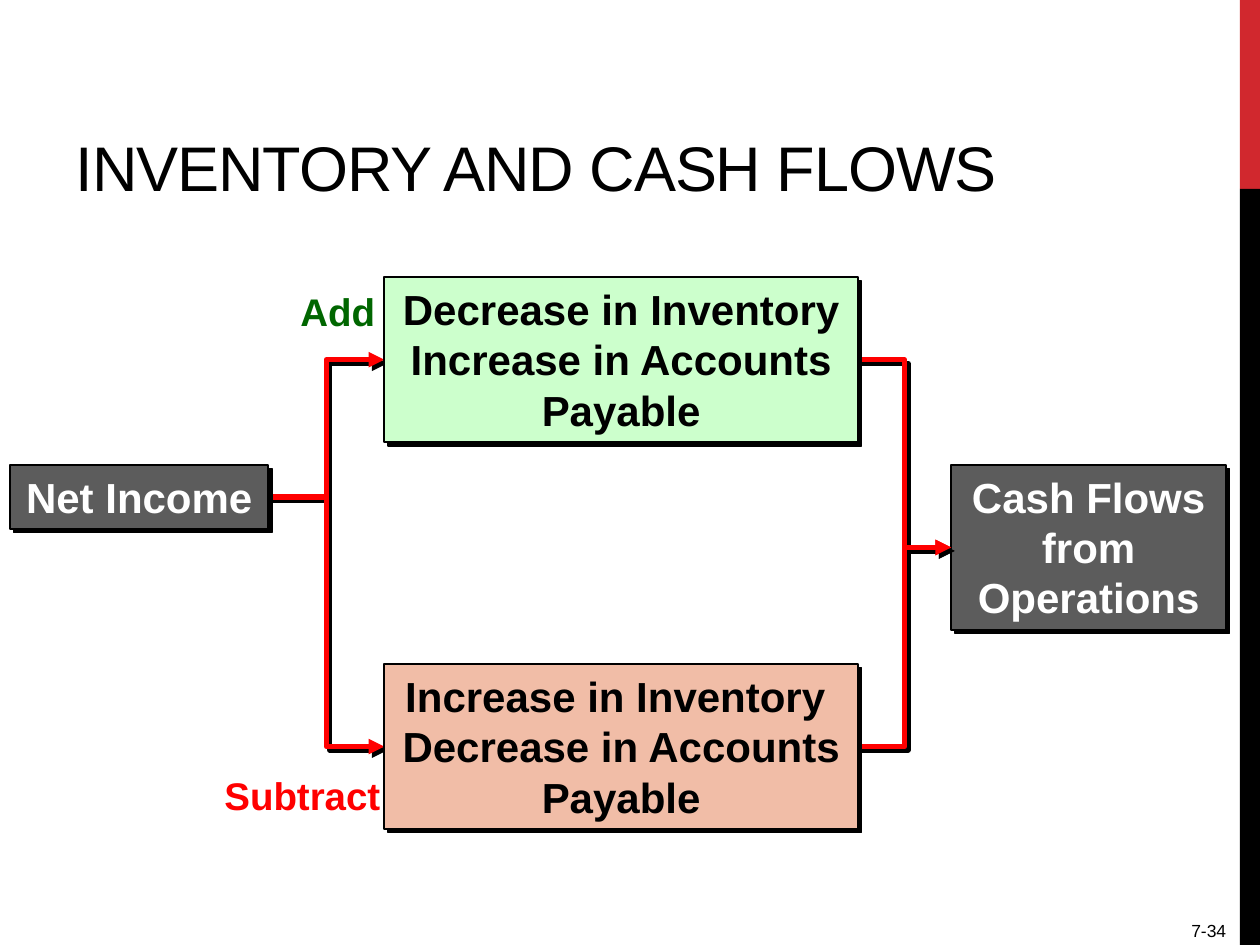
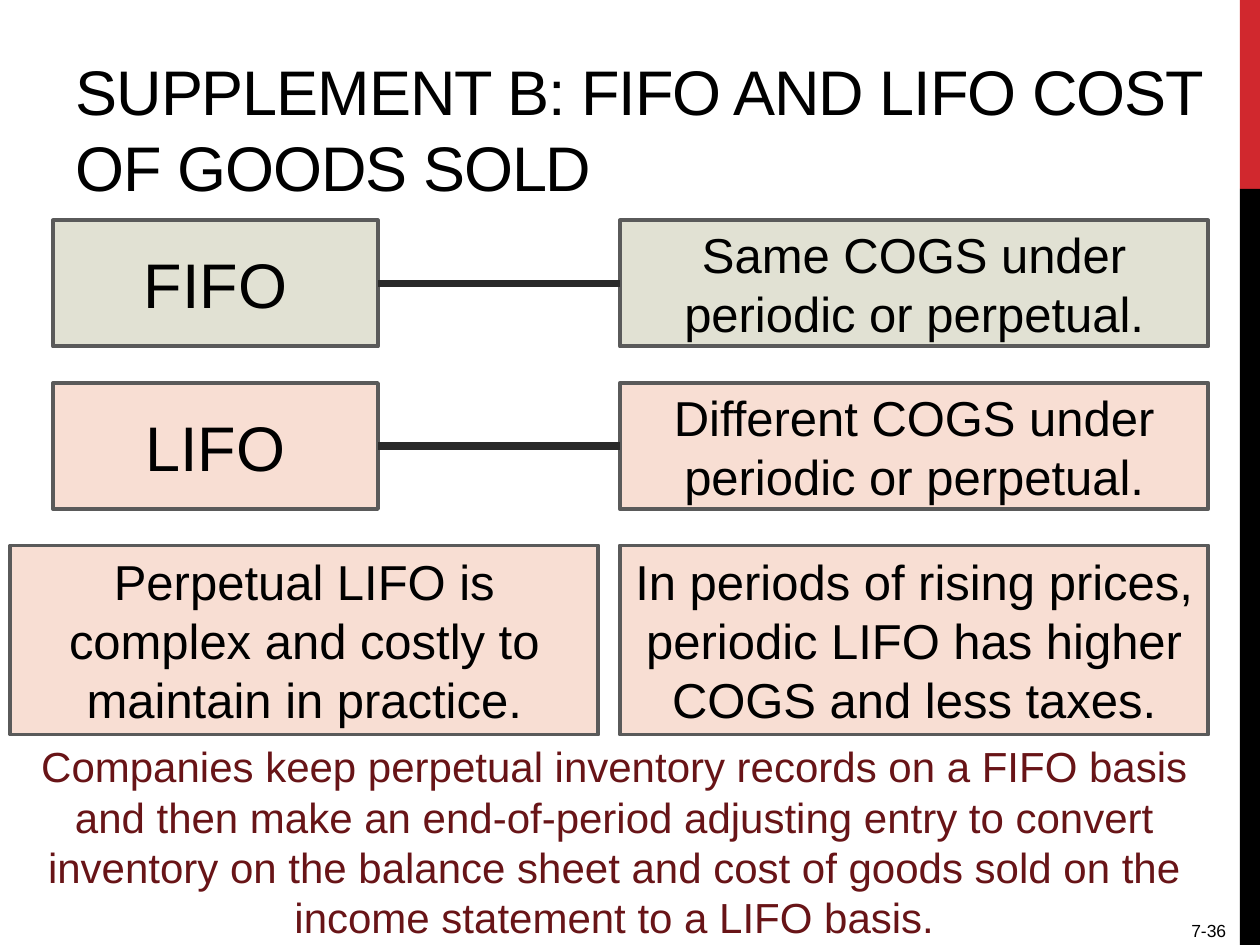
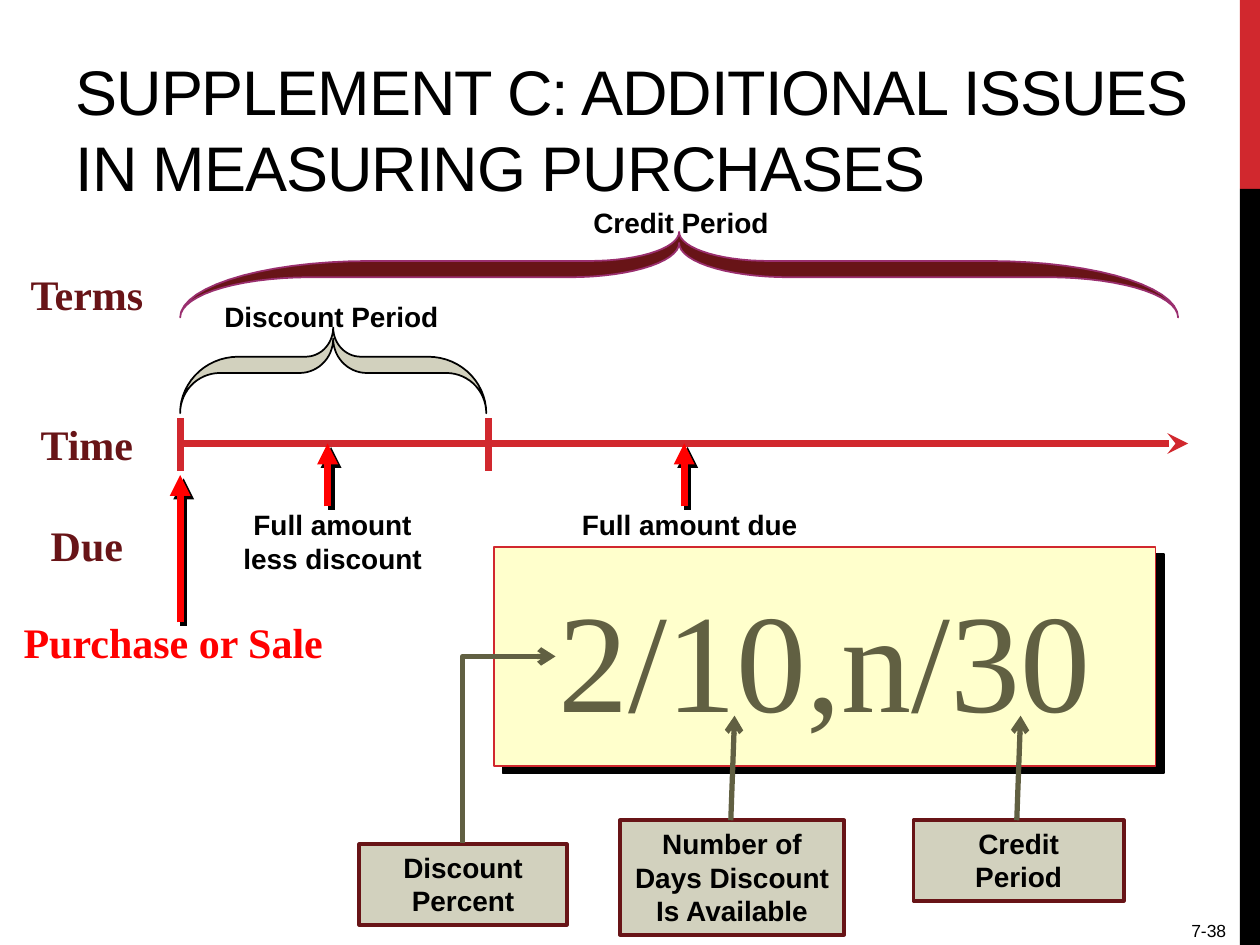
from dataclasses import dataclass
from math import cos, radians, sin

from lxml.etree import SubElement
from pptx import Presentation
from pptx.dml.color import RGBColor
from pptx.enum.shapes import MSO_CONNECTOR as Link, MSO_SHAPE as Preset
from pptx.enum.text import MSO_ANCHOR as Anchor, MSO_AUTO_SIZE as AutoSize, PP_ALIGN as Align
from pptx.oxml.ns import qn
from pptx.util import Inches, Pt


@dataclass(frozen=True)
class TextStyle:
    size: int
    color: str
    bold: bool = False
    name: str = "Arial"
    align: Align = Align.CENTER


@dataclass(frozen=True)
class Theme:
    black: str = "000000"
    white: str = "FFFFFF"
    crimson: str = "D1282E"
    red: str = "FF0000"
    maroon: str = "681417"
    plum: str = "9A2F6F"
    green: str = "006600"
    mint: str = "CCFFCC"
    salmon: str = "F1BDA7"
    blush: str = "F8DED3"
    sage: str = "E1E1D3"
    stone: str = "D2D1BE"
    olive: str = "616042"
    cream: str = "FFFFCC"
    slate: str = "5C5C5C"
    edge: str = "5A5A5A"
    charcoal: str = "292929"
    serif: str = "Times New Roman"
    tiny: int = 10
    small: int = 16
    label: int = 22
    body: int = 24
    large: int = 28
    heading: int = 36
    display: int = 80


THEME = Theme()
TITLE = TextStyle(THEME.heading, THEME.black, align=Align.LEFT)
FOOTER = TextStyle(THEME.tiny, THEME.black, align=Align.RIGHT)
TERM = TextStyle(THEME.heading, THEME.black)
MEANING = TextStyle(THEME.large, THEME.black)
SUMMARY = TextStyle(THEME.body, THEME.maroon)
FLOW_DARK = TextStyle(THEME.body, THEME.white, True)
FLOW_LIGHT = TextStyle(THEME.body, THEME.black, True)
ADD = TextStyle(THEME.label, THEME.green, True)
SUBTRACT = TextStyle(THEME.label, THEME.red, True)
NOTE = TextStyle(THEME.small, THEME.black, True)
ROW_NAME = TextStyle(THEME.body, THEME.maroon, True, THEME.serif)
EVENT = TextStyle(THEME.body, THEME.red, True, THEME.serif)
FORMULA = TextStyle(THEME.display, THEME.olive, False, THEME.serif)

TITLE_AT = (0.5, 0.17, 9.17, 1.5)
NUMBER_AT = (8.75, 7.25, 1.08, 0.27)
BANDS = [((9.84, 0, 0.16, 1.5), THEME.crimson), ((9.84, 1.5, 0.16, 6), THEME.black)]
SMALL_SHADOW = (2.8, 45)
DEEP_SHADOW = (6.4, 39)

FLOW_BOXES = {
    "operations": ((7.55, 3.69, 2.18, 1.31), "Cash Flows from Operations", FLOW_DARK, THEME.slate),
    "income": ((0.08, 3.69, 2.05, 0.51), "Net Income", FLOW_DARK, THEME.slate),
    "add": ((3.05, 2.2, 3.76, 1.31), "Decrease in Inventory\nIncrease in Accounts Payable",
            FLOW_LIGHT, THEME.mint),
    "subtract": ((3.05, 5.27, 3.76, 1.31),
                 "Increase in Inventory \nDecrease in Accounts Payable", FLOW_LIGHT, THEME.salmon),
}
FLOW_LINKS = [("income", "add"), ("income", "subtract"),
              ("add", "operations"), ("subtract", "operations")]
FLOW_LABELS = [((2.14, 2.24, 1.08, 0.46), "Add", ADD),
               ((1.61, 6.08, 1.58, 0.46), "Subtract", SUBTRACT)]

METHODS = [("FIFO", "Same COGS under periodic or perpetual.", THEME.sage),
           ("LIFO", "Different COGS under periodic or perpetual.", THEME.blush)]
LIFO_NOTES = [(0.08, "Perpetual LIFO is complex and costly to maintain in practice."),
              (4.92, "In periods of rising prices, periodic LIFO has higher COGS and less taxes.")]
METHOD_TOP, METHOD_PITCH = 1.75, 1.29
CONVERSION = ("Companies keep perpetual inventory records on a FIFO basis and then make an "
              "end-of-period adjusting entry to convert inventory on the balance sheet and cost "
              "of goods sold on the income statement to a LIFO basis.")

TIME_Y, START_X, DISCOUNT_X = 3.52, 1.43, 3.88
ROW_NAMES = "Terms\nTime\nDue"
ROW_GAPS = (0, 57, 29)
BRACES = [((START_X, 2.6, 2.43, 0.68), THEME.stone, THEME.black),
          ((START_X, 1.84, 7.92, 0.68), THEME.maroon, THEME.plum)]
TIMELINE_NOTES = [
    ((1.67, 2.33, 1.92, 0.37), "Discount Period", NOTE),
    ((4.6, 1.58, 1.61, 0.37), "Credit Period", NOTE),
    ((1.82, 3.98, 1.64, 0.64), "Full amount\nless discount", NOTE),
    ((4.51, 3.98, 1.93, 0.37), "Full amount due", NOTE),
    ((0.08, 4.84, 2.59, 0.5), "Purchase or Sale", EVENT),
]
DUE_ARROWS = [(5.43, 4.02, TIME_Y), (2.6, 4.02, TIME_Y), (START_X, 4.94, 3.77)]
FORMULA_AT = (3.92, 4.34, 5.25, 1.74)
FORMULA_PARTS = [((2.85, 6.7, 1.65, 0.64), "Discount Percent"),
                 ((4.92, 6.51, 1.78, 0.91), "Number of Days Discount Is Available"),
                 ((7.25, 6.51, 1.67, 0.64), "Credit\vPeriod")]
FORMULA_ARROWS = [((5.8, 6.51), (5.83, 5.68)), ((8.07, 6.51), (8.1, 5.68))]


def rgb(color):
    return RGBColor.from_string(color)


def inches(values):
    return [Inches(value) for value in values]


def apply_format(target, values):
    for name, value in values.items():
        setattr(target, name, value)


def write(frame, text, style, anchor=Anchor.TOP, wrap=True, gaps=()):
    apply_format(frame, {"word_wrap": wrap, "auto_size": AutoSize.NONE, "vertical_anchor": anchor})
    for index, line in enumerate(text.split("\n")):
        paragraph = frame.add_paragraph() if index else frame.paragraphs[0]
        paragraph.text = line
        paragraph.alignment = style.align
        if gaps:
            paragraph.space_before = Pt(gaps[index])
        for run in paragraph.runs:
            apply_format(run.font, {"name": style.name, "size": Pt(style.size), "bold": style.bold})
            run.font.color.rgb = rgb(style.color)


def set_line(shape, color, width):
    shape.line.color.rgb = rgb(color)
    shape.line.width = Pt(width)


def set_effects(shape, shadow=None):
    effects = SubElement(shape.element.spPr, qn("a:effectLst"))
    if shadow:
        distance, angle = shadow
        outer = SubElement(effects, qn("a:outerShdw"), blurRad="0", dist=str(Pt(distance)),
                           dir=str(angle * 60000), algn="ctr", rotWithShape="0")
        SubElement(outer, qn("a:srgbClr"), val=THEME.black)


def finish(shape, fill, line=None, shadow=None):
    shape.fill.solid()
    shape.fill.fore_color.rgb = rgb(fill)
    if line:
        set_line(shape, *line)
    else:
        shape.line.fill.background()
    set_effects(shape, shadow)


def add_box(slide, at, fill, line=None, shadow=None, text="", style=None, **layout):
    shape = slide.shapes.add_shape(Preset.RECTANGLE, *inches(at))
    finish(shape, fill, line, shadow)
    if text:
        write(shape.text_frame, text, style, **layout)


def add_text(slide, at, text, style, **layout):
    write(slide.shapes.add_textbox(*inches(at)).text_frame, text, style, **layout)


def add_line(slide, start, end, color, width, head=None, shadow=None, kind=Link.STRAIGHT):
    connector = slide.shapes.add_connector(kind, *inches(start + end))
    set_line(connector, color, width)
    if head:
        SubElement(connector.line._get_or_add_ln(), qn("a:tailEnd"), type=head)
    set_effects(connector, shadow)
    return connector


def right_middle(at):
    left, top, width, height = at
    return left + width, top + height / 2


def left_middle(at):
    left, top, width, height = at
    return left, top + height / 2


def arc(center, radius, start, stop):
    step = 6 if stop > start else -6
    return [(center[0] + radius[0] * cos(radians(angle)), center[1] + radius[1] * sin(radians(angle)))
            for angle in range(start, stop + step, step)]


def brace_outline():
    outer = arc((0.19, 1), (0.19, 0.66), 180, 270) + arc((0.41, 0), (0.09, 0.34), 90, 0)
    inner = arc((0.39, 0.13), (0.11, 0.4), 0, 90) + arc((0.13, 1), (0.13, 0.47), 270, 180)
    mirrored = [(1 - x, y) for x, y in reversed(inner + outer)]
    return outer + mirrored + inner


def add_brace(slide, at, fill, line_color):
    left, top, width, height = at
    points = [(Inches(left + x * width), Inches(top + y * height)) for x, y in brace_outline()]
    builder = slide.shapes.build_freeform(*points[0])
    builder.add_line_segments(points[1:], close=True)
    finish(builder.convert_to_shape(), fill, (line_color, 1))


def add_slide(presentation, title, number):
    slide = presentation.slides.add_slide(presentation.slide_layouts[5])
    for at, color in BANDS:
        add_box(slide, at, color)
    add_text(slide, NUMBER_AT, number, FOOTER)
    placeholder = slide.shapes.title
    apply_format(placeholder, dict(zip(("left", "top", "width", "height"), inches(TITLE_AT))))
    write(placeholder.text_frame, title, TITLE, Anchor.BOTTOM)
    for run in placeholder.text_frame.paragraphs[0].runs:
        run.font._element.set("spc", "-60")
    return slide


def build_cash_flows(presentation):
    slide = add_slide(presentation, "INVENTORY AND CASH FLOWS", "7-34")
    for at, text, style in FLOW_LABELS:
        add_text(slide, at, text, style)

    def add_flow_box(name):
        at, text, style, fill = FLOW_BOXES[name]
        add_box(slide, at, fill, (THEME.black, 1), SMALL_SHADOW, text, style)

    add_flow_box("operations")
    for source, target in FLOW_LINKS:
        add_line(slide, right_middle(FLOW_BOXES[source][0]), left_middle(FLOW_BOXES[target][0]),
                 THEME.red, 3, "triangle", SMALL_SHADOW, Link.ELBOW)
    for name in ("income", "add", "subtract"):
        add_flow_box(name)


def build_cost_of_goods(presentation):
    slide = add_slide(presentation, "SUPPLEMENT B: FIFO AND LIFO COST OF GOODS SOLD", "7-36")
    edge = (THEME.edge, 2.25)
    for row, (term, meaning, fill) in enumerate(METHODS):
        top = METHOD_TOP + row * METHOD_PITCH
        term_at, meaning_at = (0.42, top, 2.58, 1), (4.92, top, 4.67, 1)
        add_box(slide, term_at, fill, edge, None, term, TERM, anchor=Anchor.MIDDLE)
        add_box(slide, meaning_at, fill, edge, None, meaning, MEANING, anchor=Anchor.MIDDLE)
        add_line(slide, right_middle(term_at), left_middle(meaning_at), THEME.charcoal, 4.5)
    note_top = METHOD_TOP + len(METHODS) * METHOD_PITCH
    for left, text in LIFO_NOTES:
        add_box(slide, (left, note_top, 4.67, 1.5), THEME.blush, edge, None, text, MEANING,
                anchor=Anchor.MIDDLE)
    add_text(slide, (0, 5.83, 9.75, 1.72), CONVERSION, SUMMARY)


def build_credit_terms(presentation):
    slide = add_slide(presentation, "SUPPLEMENT C: ADDITIONAL ISSUES IN MEASURING PURCHASES", "7-38")
    add_line(slide, (START_X, TIME_Y), (9.43, TIME_Y), THEME.crimson, 4, "stealth")
    for x in (START_X, DISCOUNT_X):
        add_line(slide, (x, 3.32), (x, 3.74), THEME.crimson, 4)
    add_text(slide, (0.14, 2.08, 1.1, 2.52), ROW_NAMES, ROW_NAME, wrap=False, gaps=ROW_GAPS)
    for brace in BRACES:
        add_brace(slide, *brace)
    for at, text, style in TIMELINE_NOTES:
        add_text(slide, at, text, style, wrap=False)
    for x, bottom, top in DUE_ARROWS:
        add_line(slide, (x, bottom), (x, top), THEME.red, 4, "triangle", SMALL_SHADOW)
    add_box(slide, FORMULA_AT, THEME.cream, (THEME.crimson, 1), DEEP_SHADOW, "2/10,n/30", FORMULA,
            anchor=Anchor.MIDDLE, wrap=False)
    for at, text in FORMULA_PARTS:
        add_box(slide, at, THEME.stone, (THEME.maroon, 2), None, text, NOTE)
    for start, end in FORMULA_ARROWS:
        add_line(slide, start, end, THEME.olive, 3, "arrow")
    percent_link = add_line(slide, (4.78, 6.32), (3.3, 5.58), THEME.olive, 3, "arrow",
                            kind=Link.ELBOW)
    properties = percent_link.element.spPr
    properties.find(qn("a:xfrm")).set("rot", str(90 * 60000))
    properties.find(qn("a:prstGeom")).set("prst", "bentConnector2")


def main():
    presentation = Presentation()
    apply_format(presentation, {"slide_width": Inches(10), "slide_height": Inches(7.5)})
    build_cash_flows(presentation)
    build_cost_of_goods(presentation)
    build_credit_terms(presentation)
    presentation.save("out.pptx")


if __name__ == "__main__":
    main()
